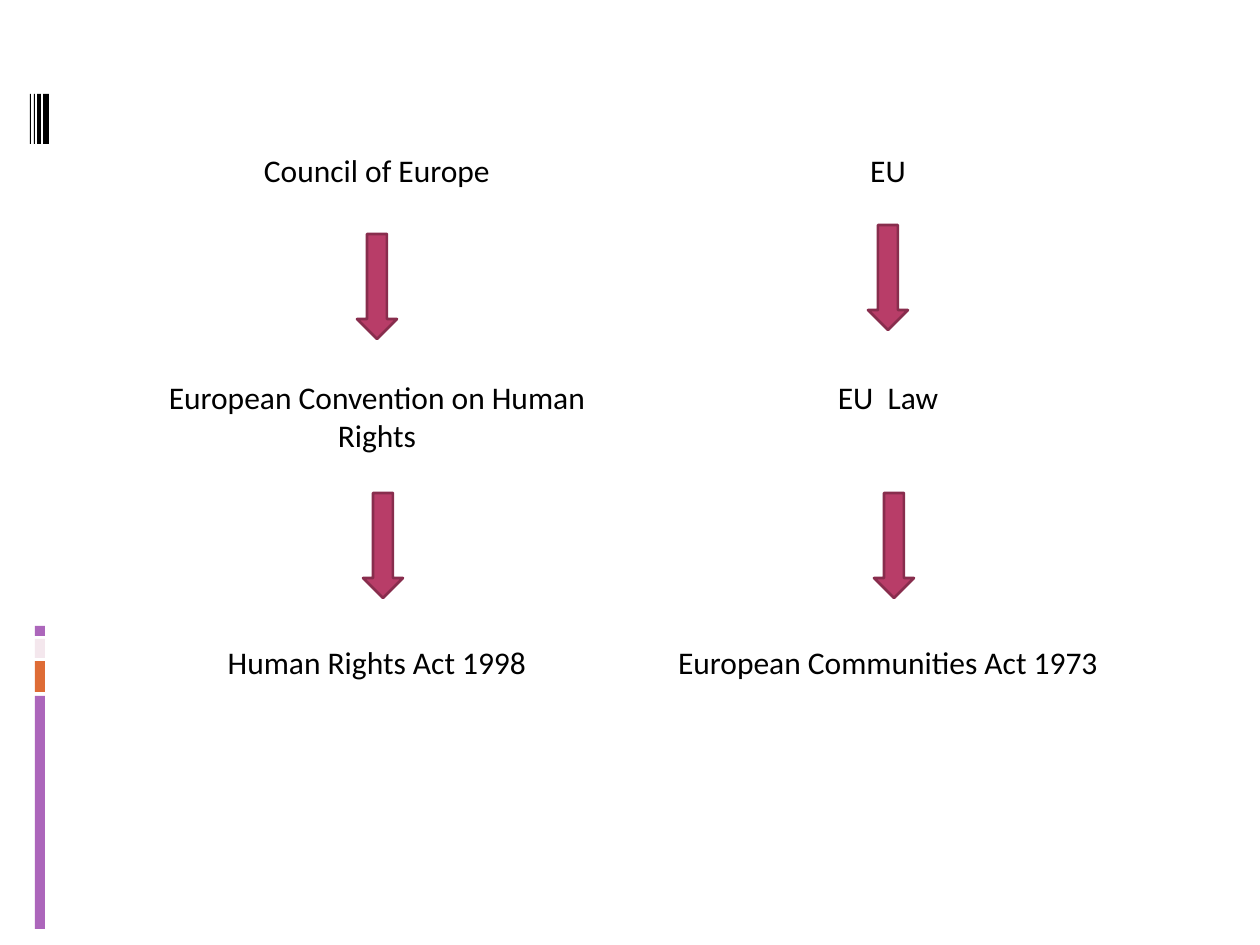
import pptx
import pptx.util
from pptx.dml.color import RGBColor
from pptx.enum.shapes import MSO_SHAPE
from pptx.enum.text import MSO_ANCHOR, MSO_AUTO_SIZE, PP_ALIGN

EMU_PER_PX = 914400 / 126
PURPLE = RGBColor(0xAC, 0x66, 0xBB)
ORANGE = RGBColor(0xDE, 0x6C, 0x36)
PALE_PINK = RGBColor(0xF4, 0xE7, 0xED)
BLACK = RGBColor(0x00, 0x00, 0x00)
MAGENTA = RGBColor(0xB8, 0x3D, 0x68)
DARK_MAGENTA = RGBColor(0x88, 0x2D, 0x4D)

SIDE_BARS = [(626, 10, PURPLE), (639, 19, PALE_PINK), (661, 31, ORANGE), (696, 233, PURPLE)]
BARCODE_STRIPES = [(30, 1), (34, 1), (37, 4), (43, 6)]
ARROWS = [(357, 234), (363, 493), (868, 225), (874, 493)]
COLUMNS = [
    (144, 466, 624, [
        ("Council of Europe", 0),
        ("European Convention on Human Rights", 108),
        ("Human Rights Act 1998", 108),
    ]),
    (650, 476, 738, [
        ("EU", 0),
        ("EU  Law", 108),
        ("European Communities Act 1973", 130),
    ]),
]


def px(value):
    return pptx.util.Emu(round(value * EMU_PER_PX))


def add_box(slide, kind, left, top, width, height, fill, line=None):
    shape = slide.shapes.add_shape(kind, px(left), px(top), px(width), px(height))
    shape.shadow.inherit = False
    shape.fill.solid()
    shape.fill.fore_color.rgb = fill
    if line is None:
        shape.line.fill.background()
    else:
        shape.line.color.rgb = line
        shape.line.width = pptx.util.Pt(1.5)


def write_text(paragraph, text, size=18, font="Calibri", color=BLACK,
               align=PP_ALIGN.CENTER, space_before=0):
    paragraph.alignment = align
    paragraph.space_before = pptx.util.Pt(space_before)
    run = paragraph.add_run()
    run.text = text
    run.font.size = pptx.util.Pt(size)
    run.font.name = font
    run.font.color.rgb = color


def add_column(slide, left, width, height, entries):
    shape = slide.shapes.add_textbox(px(left), px(145), px(width), px(height))
    frame = shape.text_frame
    frame.word_wrap = True
    frame.auto_size = MSO_AUTO_SIZE.SHAPE_TO_FIT_TEXT
    frame.vertical_anchor = MSO_ANCHOR.TOP
    for index, (text, space_before) in enumerate(entries):
        paragraph = frame.add_paragraph() if index else frame.paragraphs[0]
        write_text(paragraph, text, space_before=space_before)


def main():
    presentation = pptx.Presentation()
    presentation.slide_width = px(1260)
    presentation.slide_height = px(945)
    slide = presentation.slides.add_slide(presentation.slide_layouts[6])
    for top, height, color in SIDE_BARS:
        add_box(slide, MSO_SHAPE.RECTANGLE, 35, top, 10, height, color)
    for left, width in BARCODE_STRIPES:
        add_box(slide, MSO_SHAPE.RECTANGLE, left, 94, width, 50, BLACK)
    for left, width, height, entries in COLUMNS:
        add_column(slide, left, width, height, entries)
    for left, top in ARROWS:
        add_box(slide, MSO_SHAPE.DOWN_ARROW, left, top, 40, 105, MAGENTA, DARK_MAGENTA)
    presentation.save("out.pptx")


if __name__ == "__main__":
    main()
